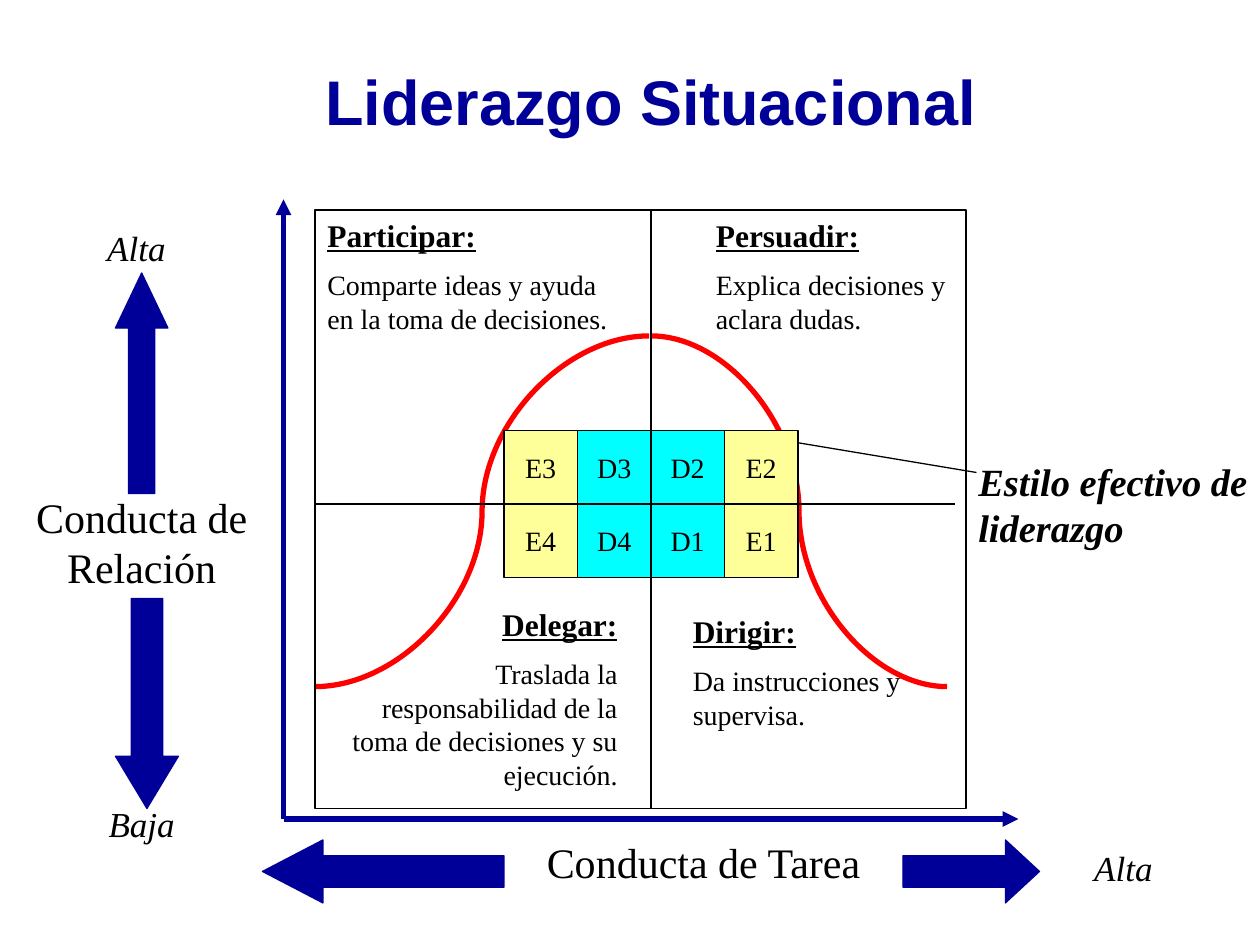
from typing import NamedTuple

from pptx import Presentation
from pptx.dml.color import RGBColor
from pptx.enum import shapes as s, text as t
from pptx.oxml.ns import qn
from pptx.util import Pt

SERIF = "Times New Roman"
NAVY, RED, BLACK = "000099", "FF0000", "000000"
CYAN, YELLOW = "00FFFF", "FFFF99"
LEFT, MID, RIGHT = t.PP_ALIGN.LEFT, t.PP_ALIGN.CENTER, t.PP_ALIGN.RIGHT
STRAIGHT, CURVE = s.MSO_CONNECTOR.STRAIGHT, s.MSO_CONNECTOR.CURVE
SHAPE = s.MSO_SHAPE


class Box(NamedTuple):
    x: float
    y: float
    w: float
    h: float


class Line(NamedTuple):
    start: tuple
    end: tuple
    color: str = BLACK
    width: float = 0.75
    kind: int = STRAIGHT
    arrow: bool = False


class Arrow(NamedTuple):
    kind: int
    box: Box
    head: float


class Label(NamedTuple):
    words: str
    box: Box
    size: float
    bold: bool = False
    italic: bool = False
    align: int = MID
    spacing: float = 1.0


class Style(NamedTuple):
    head: str
    body: str
    box: Box
    align: int = LEFT


FRAME = Box(180, 120, 372, 342)
CENTER = (372, 288)
TILE = 42
TILES = (("E3", "D3", "D2", "E2"), ("E4", "D4", "D1", "E1"))

AXES = (
    Line((162, 468), (162, 114), NAVY, 3, arrow=True),
    Line((162, 468), (582, 468), NAVY, 3, arrow=True),
)
CURVES = (
    Line((180, 392.4), (371, 192), RED, 3, CURVE),
    Line((541.2, 392.4), (372, 192), RED, 3, CURVE),
)
RULES = (
    Line((372, 120), (372, 462)),
    Line((180, 288), (546, 288)),
    Line((558, 270), (450, 252), arrow=True),
)
ARROWS = (
    Arrow(SHAPE.RIGHT_ARROW, Box(516, 480, 78, 36), 0.54),
    Arrow(SHAPE.LEFT_ARROW, Box(150, 480, 138, 36), 0.96),
    Arrow(SHAPE.UP_ARROW, Box(66, 156, 30, 126), 1.05),
    Arrow(SHAPE.DOWN_ARROW, Box(66, 342, 36, 120), 0.83),
)
LABELS = (
    Label("Estilo efectivo de liderazgo", Box(552, 258, 186, 60), 22,
          bold=True, italic=True, align=LEFT),
    Label("Conducta de Tarea", Box(198, 482.4, 408, 27.4), 24, spacing=0.7),
    Label("Conducta de Relación", Box(0, 277.2, 162, 65), 24),
    Label("Baja", Box(30, 455, 102, 31), 20, italic=True),
    Label("Alta", Box(24, 126, 108, 31), 20, italic=True),
    Label("Alta", Box(588, 480, 108, 31), 20, italic=True),
)
STYLES = (
    Style("Delegar:", "Traslada la responsabilidad de la toma de decisiones "
          "y su ejecución.", Box(186, 342, 174, 115), RIGHT),
    Style("Participar:", "Comparte ideas y ayuda en la toma de decisiones.",
          Box(180, 120, 186, 96)),
    Style("Persuadir:", "Explica decisiones y aclara dudas.",
          Box(402, 120, 150, 77)),
    Style("Dirigir:", "Da instrucciones y supervisa.",
          Box(388.8, 346.3, 138, 77)),
)


def points(values) -> list:
    return [Pt(v) for v in values]


def paint(target, color: str) -> None:
    """Give a fill or a line one solid colour."""
    fill = getattr(target, "fill", target)
    fill.solid()
    fill.fore_color.rgb = RGBColor.from_string(color)


def write(par, words: str, size: float, align: int = MID,
          color: str = BLACK, name: str = SERIF):
    par.text, par.alignment = words, align
    font = par.font
    font.name, font.size = name, Pt(size)
    font.color.rgb = RGBColor.from_string(color)
    return font


def draw_line(slide, line: Line) -> None:
    link = slide.shapes.add_connector(
        line.kind, *points(line.start + line.end))
    paint(link.line, line.color)
    link.line.width = Pt(line.width)
    props = link._element.spPr
    if line.arrow:
        tip = props.find(qn("a:ln")).makeelement(
            qn("a:tailEnd"), {"type": "triangle"})
        props.find(qn("a:ln")).append(tip)
    props.append(props.makeelement(qn("a:effectLst"), {}))


def draw_shape(slide, kind: int, box: Box, fill: str = "",
               edge: str = BLACK):
    shape = slide.shapes.add_shape(kind, *points(box))
    shape.shadow.inherit = False
    if fill:
        paint(shape.fill, fill)
    else:
        shape.fill.background()
    paint(shape.line, edge)
    shape.line.width = Pt(0.75)
    return shape


def draw_arrow(slide, arrow: Arrow) -> None:
    shape = draw_shape(slide, arrow.kind, arrow.box, NAVY, NAVY)
    shape.adjustments[0] = 0.5
    shape.adjustments[1] = arrow.head


def add_text(slide, box: Box):
    frame = slide.shapes.add_textbox(*points(box)).text_frame
    frame.word_wrap = True
    return frame


def draw_label(slide, label: Label) -> None:
    par = add_text(slide, label.box).paragraphs[0]
    font = write(par, label.words, label.size, label.align)
    font.bold, font.italic = label.bold, label.italic
    par.line_spacing = label.spacing


def draw_style(slide, style: Style) -> None:
    frame = add_text(slide, style.box)
    font = write(frame.paragraphs[0], style.head, 18, style.align)
    font.bold = font.underline = True
    body = frame.add_paragraph()
    write(body, style.body, 16, style.align)
    body.space_before = Pt(8)


def draw_tiles(slide) -> None:
    left, top = CENTER[0] - 2 * TILE, CENTER[1] - TILE
    for row, names in enumerate(TILES):
        for col, name in enumerate(names):
            box = Box(left + col * TILE, top + row * TILE, TILE, TILE)
            fill = CYAN if name.startswith("D") else YELLOW
            frame = draw_shape(slide, SHAPE.RECTANGLE, box, fill).text_frame
            frame.word_wrap = False
            frame.vertical_anchor = t.MSO_ANCHOR.MIDDLE
            write(frame.paragraphs[0], name, 16)


def set_title(slide) -> None:
    title = slide.shapes.title
    title.left, title.top, title.width, title.height = points(
        (36, 40.3, 672, 42))
    frame = title.text_frame
    frame.vertical_anchor = t.MSO_ANCHOR.TOP
    frame.auto_size = t.MSO_AUTO_SIZE.NONE
    par = frame.paragraphs[0]
    write(par, "Liderazgo Situacional", 36, MID, NAVY, "Arial").bold = True
    par.line_spacing = 0.8


def main() -> None:
    deck = Presentation()
    deck.slide_width, deck.slide_height = Pt(720), Pt(540)
    slide = deck.slides.add_slide(deck.slide_layouts[5])
    set_title(slide)
    for line in AXES + CURVES:
        draw_line(slide, line)
    for arrow in ARROWS:
        draw_arrow(slide, arrow)
    for label in LABELS:
        draw_label(slide, label)
    draw_shape(slide, SHAPE.RECTANGLE, FRAME)
    for style in STYLES:
        draw_style(slide, style)
    for line in RULES:
        draw_line(slide, line)
    draw_tiles(slide)
    deck.save("out.pptx")


if __name__ == "__main__":
    main()
